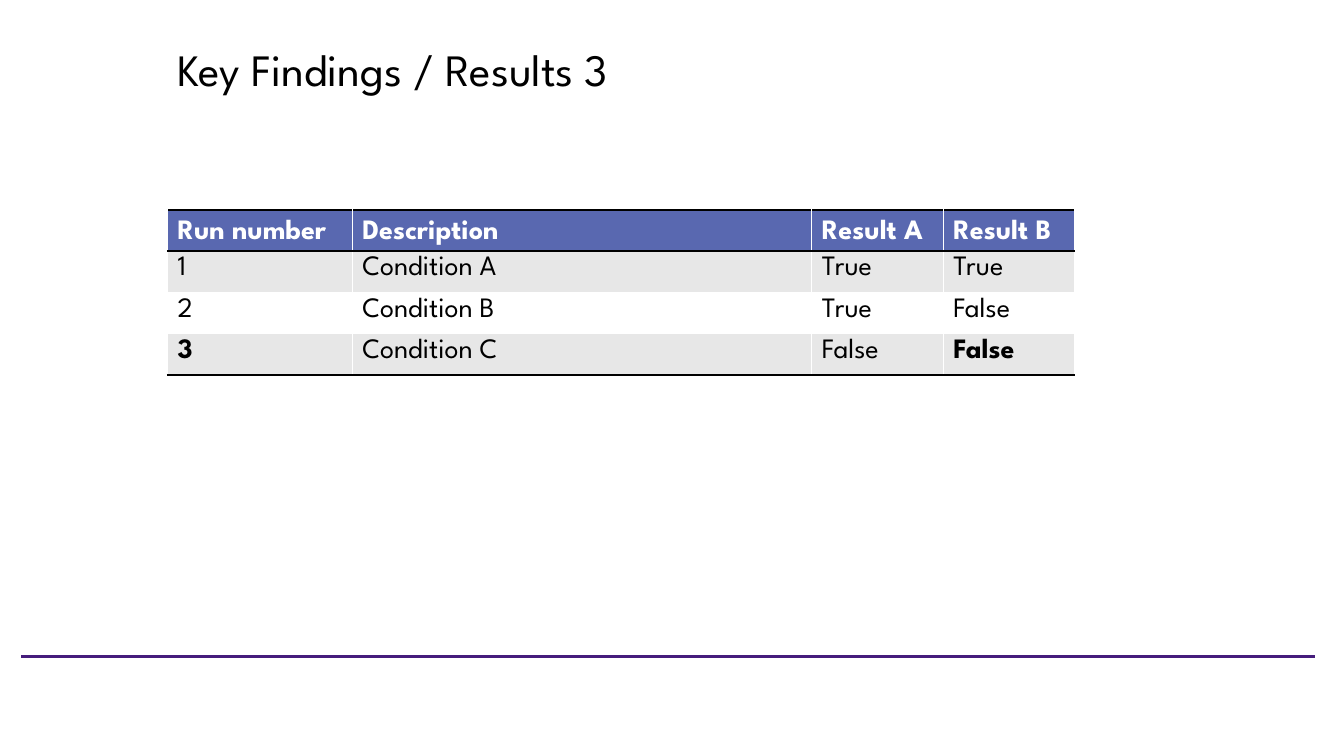
from lxml import etree
from pptx import Presentation
from pptx.dml.color import RGBColor
from pptx.enum.shapes import MSO_CONNECTOR
from pptx.enum.text import MSO_ANCHOR, MSO_AUTO_SIZE, PP_ALIGN
from pptx.oxml.ns import qn
from pptx.util import Cm, Pt

STRAIGHT = MSO_CONNECTOR.STRAIGHT
TOP, BOTTOM = MSO_ANCHOR.TOP, MSO_ANCHOR.BOTTOM
NO_FIT = MSO_AUTO_SIZE.NONE
LEFT = PP_ALIGN.LEFT
TITLE_ONLY = 5

COLUMN_WIDTHS = (4.66, 11.58, 3.31, 3.31)
ROW_HEIGHT = 1.04
RESULTS = (
    ("Run number", "Description", "Result A", "Result B"),
    ("1", "Condition A", "True", "True"),
    ("2", "Condition B", "True", "False"),
    ("3", "Condition C", "False", "False"),
)
EMPHASIZED = {(3, 0), (3, 3)}


def color(value):
    return RGBColor.from_string(value)


class ResultsPage:
    font = "League Spartan"
    ink, white = "000000", "FFFFFF"
    header, band, purple = "5968B0", "E7E7E7", "461D7C"

    def __init__(self, deck):
        self.page = deck.slides.add_slide(deck.slide_layouts[TITLE_ONLY])

    def add_text(self, frame, text, size=20, fill=ink, bold=False, spacing=None):
        para = frame.paragraphs[0]
        para.alignment = LEFT
        para.line_spacing = spacing
        span = para.add_run()
        span.text = text
        span.font.name = self.font
        span.font.size = Pt(size)
        span.font.bold = bold
        span.font.color.rgb = color(fill)

    def title(self, text, left, top, width, height):
        box = self.page.shapes.title
        box.left, box.top = Cm(left), Cm(top)
        box.width, box.height = Cm(width), Cm(height)
        frame = box.text_frame
        frame.word_wrap = True
        frame.auto_size = NO_FIT
        frame.vertical_anchor = TOP
        frame.margin_top = Cm(0.45)
        self.add_text(frame, text, size=32, spacing=0.9)

    def rule(self, left, right, y):
        line = self.page.shapes.add_connector(
            STRAIGHT, Cm(left), Cm(y), Cm(right), Cm(y))
        line.line.color.rgb = color(self.purple)
        line.line.width = Pt(2.25)
        etree.SubElement(line._element.spPr, qn("a:effectLst"))

    def border(self, cell, sides):
        properties = cell._tc.get_or_add_tcPr()
        for position, side in enumerate(sides):
            edge = etree.Element(qn(f"a:ln{side}"), w=str(Pt(2)))
            fill = etree.SubElement(edge, qn("a:solidFill"))
            etree.SubElement(fill, qn("a:srgbClr"), val=self.ink)
            properties.insert(position, edge)

    def table(self, rows, left, top):
        last = len(rows) - 1
        table = self.page.shapes.add_table(
            len(rows), len(COLUMN_WIDTHS), Cm(left), Cm(top),
            Cm(sum(COLUMN_WIDTHS)), Cm(ROW_HEIGHT * len(rows))).table
        table.horz_banding = False
        for column, width in zip(table.columns, COLUMN_WIDTHS):
            column.width = Cm(width)
        for r, values in enumerate(rows):
            table.rows[r].height = Cm(ROW_HEIGHT)
            is_header = r == 0
            banded = self.band if r % 2 else self.white
            sides = "TB" if is_header else "B" if r == last else ""
            for c, value in enumerate(values):
                cell = table.cell(r, c)
                cell.fill.solid()
                cell.fill.fore_color.rgb = color(
                    self.header if is_header else banded)
                cell.vertical_anchor = BOTTOM if is_header else TOP
                self.border(cell, sides)
                self.add_text(cell.text_frame, value,
                              fill=self.white if is_header else self.ink,
                              bold=is_header or (r, c) in EMPHASIZED)


def main():
    deck = Presentation()
    deck.slide_width, deck.slide_height = Cm(33.87), Cm(19.05)
    results = ResultsPage(deck)

    # Footer rule
    results.rule(0.53, 33.15, 16.54)

    # Heading and findings
    results.title("Key Findings / Results 3", 4.22, 0.76, 25.4, 2.84)
    results.table(RESULTS, 4.22, 5.29)

    deck.save("out.pptx")


if __name__ == "__main__":
    main()
